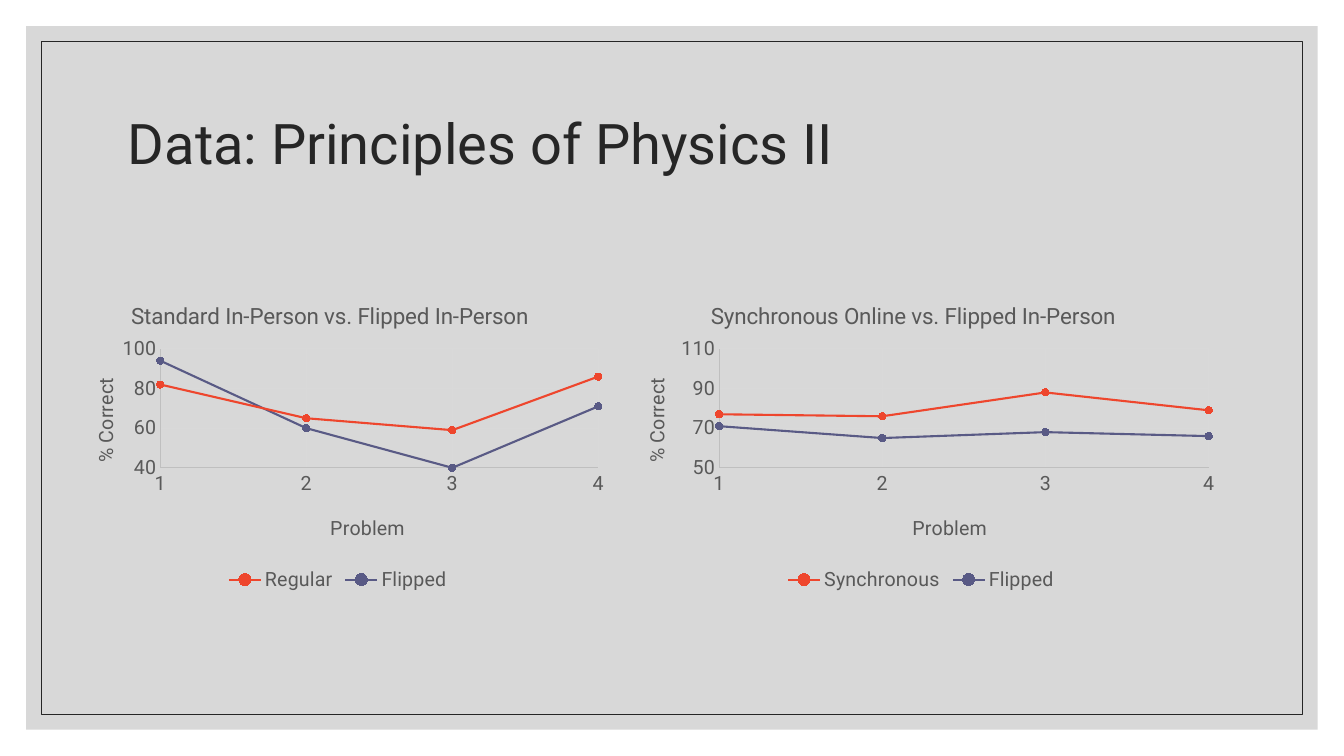
from lxml.etree import SubElement
from pptx import Presentation
from pptx.chart.data import XyChartData
from pptx.dml.color import RGBColor
from pptx.enum.chart import (XL_AXIS_CROSSES, XL_CHART_TYPE, XL_LEGEND_POSITION,
                             XL_MARKER_STYLE, XL_TICK_MARK)
from pptx.enum.shapes import MSO_SHAPE
from pptx.enum.text import MSO_ANCHOR
from pptx.oxml import parse_xml
from pptx.oxml.ns import nsdecls, qn
from pptx.util import Inches, Pt

WIDTH, HEIGHT = 13.33, 7.5
FONT = "Roboto"
INK, GRAY, AXIS, GRID = "262626", "595959", "BFBFBF", "D9D9D9"
SERIES_COLORS = ("EE462D", "595A85")
CHARTS = (
    {"box": (0.6, 2.77, 5.5, 3.14),
     "title": "Standard In-Person vs. Flipped In-Person",
     "series": {"Regular": (82, 65, 59, 86), "Flipped": (94, 60, 40, 71)},
     "range": (40, 100), "plot": (0.18, 0.79),
     "title_left": 0.12, "side_left": 0.05},
    {"box": (6.1, 2.77, 6.07, 3.14),
     "title": "Synchronous Online vs. Flipped In-Person",
     "series": {"Synchronous": (77, 76, 88, 79), "Flipped": (71, 65, 68, 66)},
     "range": (50, 110), "plot": (0.17, 0.8),
     "title_left": 0.15, "side_left": 0.04},
)


def color(value):
    """Turn a hex string into a colour."""
    return RGBColor.from_string(value)


def apply(target, **values):
    """Set each given attribute on the target."""
    for name, value in values.items():
        setattr(target, name, value)


def style_font(font, size, hex_color):
    """Give a font its face, size and colour."""
    apply(font, name=FONT, size=Pt(size), bold=False)
    font.color.rgb = color(hex_color)


def style_line(line, hex_color, width):
    """Give a line its colour and width in points."""
    line.color.rgb = color(hex_color)
    line.width = Pt(width)


def place(element, index, **shares):
    """Lay out a chart part by shares of the chart's size."""
    layout = element.find(qn("c:layout"))
    if layout is not None:
        element.remove(layout)
    layout = parse_xml(f"<c:layout {nsdecls('c')}><c:manualLayout/></c:layout>")
    element.insert(index, layout)
    settings = {"xMode": "edge", "yMode": "edge", **shares}
    if "w" in shares:
        settings = {"layoutTarget": "inner", **settings}
    for name, value in settings.items():
        SubElement(layout[0], qn(f"c:{name}")).set("val", str(value))


def add_title(owner, text, size, left, top):
    """Write the title of a chart or an axis at its place."""
    title = owner.chart_title if hasattr(owner, "chart_title") else owner.axis_title
    span = title.text_frame.paragraphs[0].add_run()
    span.text = text
    style_font(span.font, size, GRAY)
    place(title._element, 1, x=left, y=top)
    return title


def style_axis(axis, low, high, step):
    """Set the scale and look of one axis."""
    apply(axis, minimum_scale=low, maximum_scale=high, major_unit=step,
          major_tick_mark=XL_TICK_MARK.NONE, minor_tick_mark=XL_TICK_MARK.NONE,
          has_major_gridlines=True, crosses=XL_AXIS_CROSSES.MINIMUM)
    apply(axis.tick_labels, number_format="General", number_format_is_linked=False)
    style_font(axis.tick_labels.font, 14, GRAY)
    style_line(axis.format.line, AXIS, 0.75)
    style_line(axis.major_gridlines.format.line, GRID, 0.75)


def add_score_chart(page, box, title, series, range, plot, title_left, side_left):
    """Draw one comparison of scores by problem in the given box."""
    data = XyChartData()
    for name, scores in series.items():
        points = data.add_series(name)
        for problem, score in enumerate(scores, 1):
            points.add_data_point(problem, score)
    chart = page.shapes.add_chart(XL_CHART_TYPE.XY_SCATTER_LINES,
                                  *map(Inches, box), data).chart
    style_font(chart.font, 14, GRAY)
    apply(chart, has_legend=True, has_title=True)
    apply(chart.legend, position=XL_LEGEND_POSITION.BOTTOM, include_in_layout=False)
    style_font(chart.legend.font, 14, GRAY)
    chart.plots[0].vary_by_categories = False
    for line, hex_color in zip(chart.plots[0].series, SERIES_COLORS):
        line.smooth = False
        style_line(line.format.line, hex_color, 1.5)
        apply(line.marker, style=XL_MARKER_STYLE.CIRCLE, size=5)
        line.marker.format.fill.solid()
        line.marker.format.fill.fore_color.rgb = color(hex_color)
        style_line(line.marker.format.line, hex_color, 0.75)

    style_axis(chart.category_axis, 1, 4, 1)
    style_axis(chart.value_axis, *range, 20)
    add_title(chart, title, 16, title_left, 0.06)
    add_title(chart.category_axis, "Problem", 14, 0.48, 0.73)
    side = add_title(chart.value_axis, "% Correct", 14, side_left, 0.3)
    side.text_frame._txBody.bodyPr.set("rot", "-5400000")
    left, width = plot
    place(chart._chartSpace.chart.plotArea, 0, x=left, y=0.22, w=width, h=0.376)


def add_panel(page, margin):
    """Add a plain rectangle set in from the slide's edges."""
    panel = page.shapes.add_shape(
        MSO_SHAPE.RECTANGLE, Inches(margin), Inches(margin),
        Inches(WIDTH - 2 * margin), Inches(HEIGHT - 2 * margin))
    panel.shadow.inherit = False
    return panel


def add_backdrop(page):
    """Draw the gray panel and the thin frame inside it."""
    panel = add_panel(page, 0.26)
    panel.fill.solid()
    panel.fill.fore_color.rgb = color(AXIS)
    fill = panel._element.spPr.find(qn("a:solidFill"))
    SubElement(fill[0], qn("a:alpha")).set("val", "60000")
    panel.line.fill.background()
    frame = add_panel(page, 0.41)
    frame.fill.background()
    style_line(frame.line, INK, 0.5)


def add_heading(page, box, text):
    """Write the slide's heading in the given box."""
    frame = page.shapes.add_textbox(*map(Inches, box)).text_frame
    apply(frame, word_wrap=True, vertical_anchor=MSO_ANCHOR.MIDDLE)
    para = frame.paragraphs[0]
    para.line_spacing = 0.9
    span = para.add_run()
    span.text = text
    style_font(span.font, 40, INK)


def main():
    """Build the slide and save it."""
    deck = Presentation()
    apply(deck, slide_width=Inches(WIDTH), slide_height=Inches(HEIGHT))
    page = deck.slides.add_slide(deck.slide_layouts[6])
    add_backdrop(page)
    add_heading(page, (1.17, 0.7, 11, 1.5), "Data: Principles of Physics II")
    for chart in CHARTS:
        add_score_chart(page, **chart)
    deck.save("out.pptx")


if __name__ == "__main__":
    main()
